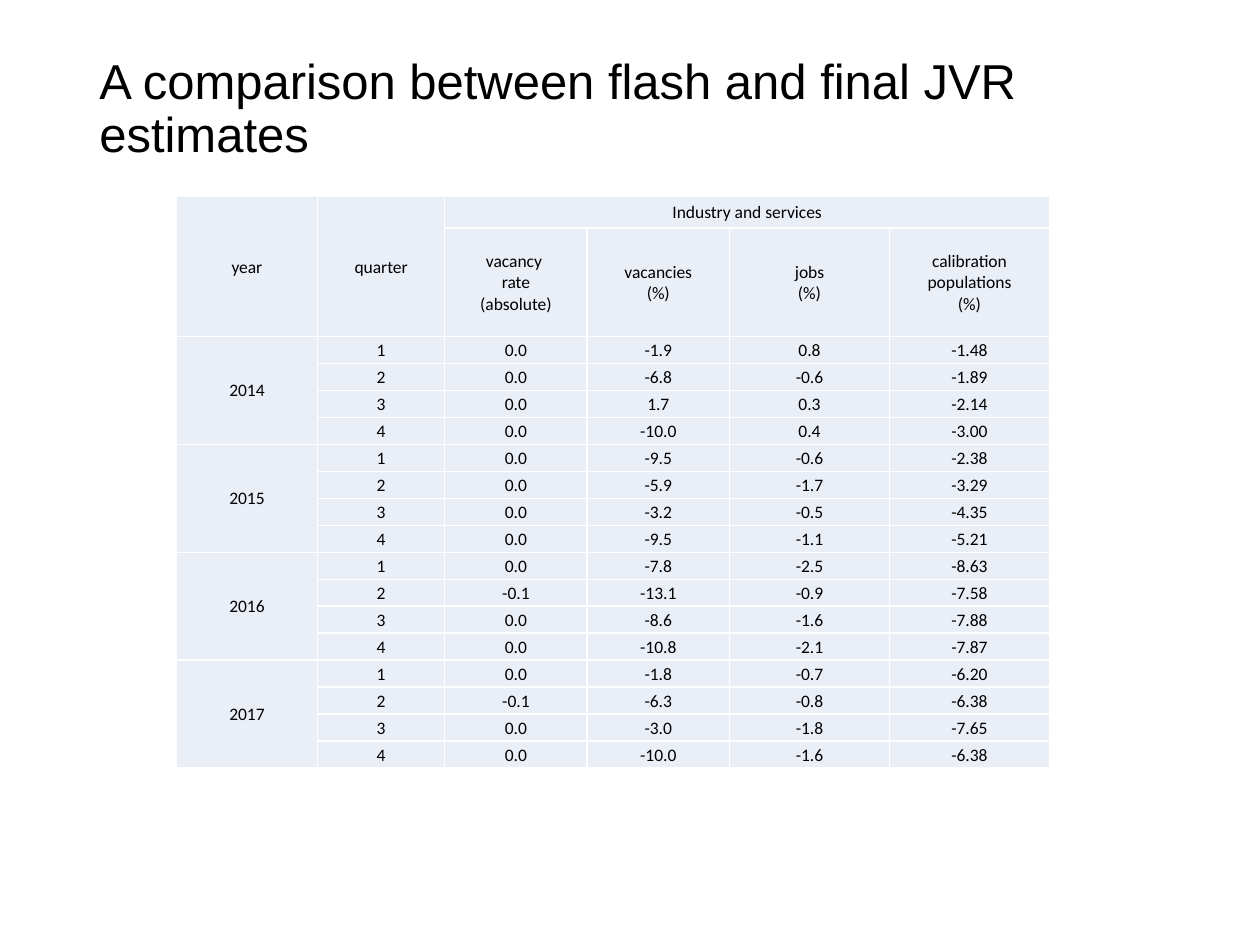
"""Build a slide with a table comparing flash and final JVR estimates."""
import copy

import pptx
import pptx.dml.color
import pptx.enum.text
import pptx.oxml
import pptx.oxml.ns
import pptx.util

Inches = pptx.util.Inches
BLACK = pptx.dml.color.RGBColor(0x00, 0x00, 0x00)
WHITE = pptx.dml.color.RGBColor(0xFF, 0xFF, 0xFF)
PALE_BLUE = pptx.dml.color.RGBColor(0xEA, 0xEF, 0xF7)
MIDDLE = pptx.enum.text.MSO_ANCHOR.MIDDLE
ALIGN = pptx.enum.text.PP_ALIGN


def write(tf, text, font, size, align, spacing=None):
    p = tf.paragraphs[0]
    p.text = text
    p.alignment = align
    p.line_spacing = spacing
    for r in p.runs:
        r.font.name = font
        r.font.size = pptx.util.Pt(size)
        r.font.color.rgb = BLACK
    for br in p._p.findall(pptx.oxml.ns.qn("a:br")):
        br.insert(0, copy.deepcopy(p.runs[0]._r.rPr))


def add_borders(cell, color, width):
    tc_pr = cell._tc.get_or_add_tcPr()
    for side in ("lnL", "lnR", "lnT", "lnB"):
        tc_pr.append(pptx.oxml.parse_xml(
            f'<a:{side} {pptx.oxml.ns.nsdecls("a")} w="{pptx.util.Pt(width)}">'
            f'<a:solidFill><a:srgbClr val="{color}"/></a:solidFill></a:{side}>'))


HEADERS = ["vacancy \nrate\n(absolute)", "vacancies\n(%)", "jobs\n(%)",
           "calibration\npopulations\n(%)"]
ESTIMATES = {
    "2014": ["0.0 -1.9 0.8 -1.48", "0.0 -6.8 -0.6 -1.89",
             "0.0 1.7 0.3 -2.14", "0.0 -10.0 0.4 -3.00"],
    "2015": ["0.0 -9.5 -0.6 -2.38", "0.0 -5.9 -1.7 -3.29",
             "0.0 -3.2 -0.5 -4.35", "0.0 -9.5 -1.1 -5.21"],
    "2016": ["0.0 -7.8 -2.5 -8.63", "-0.1 -13.1 -0.9 -7.58",
             "0.0 -8.6 -1.6 -7.88", "0.0 -10.8 -2.1 -7.87"],
    "2017": ["0.0 -1.8 -0.7 -6.20", "-0.1 -6.3 -0.8 -6.38",
             "0.0 -3.0 -1.8 -7.65", "0.0 -10.0 -1.6 -6.38"],
}
rows = [["year", "quarter", "Industry and services", "", "", ""],
        ["", ""] + HEADERS]
for year, quarters in ESTIMATES.items():
    for quarter, values in enumerate(quarters, 1):
        rows.append([year if quarter == 1 else "", str(quarter)] + values.split())

prs = pptx.Presentation()
prs.slide_width, prs.slide_height = Inches(10), Inches(7.5)
s = prs.slides.add_slide(prs.slide_layouts[6])

sp = s.shapes.add_textbox(Inches(0.69), Inches(0.4), Inches(8.62), Inches(0.95))
tf = sp.text_frame
tf.word_wrap = True
tf.vertical_anchor = MIDDLE
write(tf, "A comparison between flash and final JVR estimates",
      font="Arial", size=28, align=ALIGN.LEFT, spacing=0.9)

widths = [1.12, 1.01, 1.13, 1.13, 1.27, 1.27]
heights = [0.25, 0.86]
heights += [(4.54 - sum(heights)) / 16] * 16
table = s.shapes.add_table(len(rows), len(widths), Inches(1.4), Inches(1.56),
                           Inches(sum(widths)), Inches(sum(heights))).table
table.first_row = table.horz_banding = False
for column, width in zip(table.columns, widths):
    column.width = Inches(width)
for row, height, texts in zip(table.rows, heights, rows):
    row.height = Inches(height)
    for cell, text in zip(row.cells, texts):
        cell.margin_left = cell.margin_right = cell.margin_top = Inches(0.01)
        cell.margin_bottom = 0
        cell.vertical_anchor = MIDDLE
        add_borders(cell, WHITE, 1)
        cell.fill.solid()
        cell.fill.fore_color.rgb = PALE_BLUE
        if text:
            write(cell.text_frame, text, font="Calibri", size=10, align=ALIGN.CENTER)

table.cell(0, 2).merge(table.cell(0, 5))
for col in range(2):
    table.cell(0, col).merge(table.cell(1, col))
for top in range(2, len(rows), 4):
    table.cell(top, 0).merge(table.cell(top + 3, 0))

prs.save("out.pptx")
